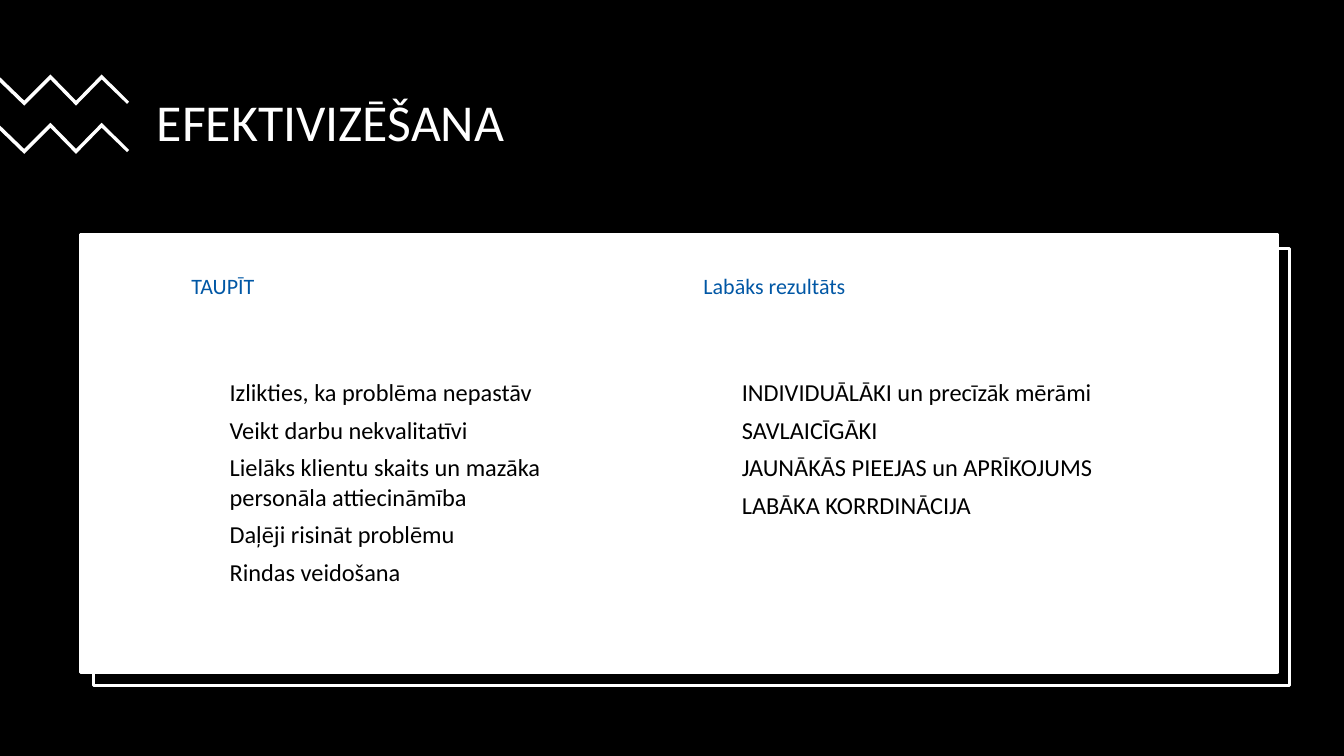
from pptx import Presentation
from pptx.dml.color import RGBColor
from pptx.enum.shapes import MSO_SHAPE
from pptx.enum.text import MSO_ANCHOR
from pptx.util import Pt

BLACK = RGBColor(0x00, 0x00, 0x00)
WHITE = RGBColor(0xFF, 0xFF, 0xFF)
BLUE = RGBColor(0x00, 0x57, 0xA5)
RECT = MSO_SHAPE.RECTANGLE
TOP, MIDDLE = MSO_ANCHOR.TOP, MSO_ANCHOR.MIDDLE

WIDTH, HEIGHT = 960, 540
TITLE = {"size": Pt(37), "color": WHITE}
HEADING = {"size": Pt(15.7), "color": BLUE}
ITEM = {"size": Pt(17.4), "color": BLACK}

COLUMNS = [
    ("TAUPĪT", 129.6, 297, [
        "Izlikties, ka problēma nepastāv",
        "Veikt darbu nekvalitatīvi",
        "Lielāks klientu skaits un mazāka personāla attiecināmība",
        "Daļēji risināt problēmu",
        "Rindas veidošana",
    ]),
    ("Labāks rezultāts", 495.4, 306, [
        "INDIVIDUĀLĀKI un precīzāk mērāmi",
        "SAVLAICĪGĀKI",
        "JAUNĀKĀS PIEEJAS un APRĪKOJUMS",
        "LABĀKA KORRDINĀCIJA",
    ]),
]


def add_rect(s, x, y, w, h, fill, line=None):
    sp = s.shapes.add_shape(RECT, Pt(x), Pt(y), Pt(w), Pt(h))
    sp.shadow.inherit = False
    sp.fill.solid()
    sp.fill.fore_color.rgb = fill
    if line is None:
        sp.line.fill.background()
    else:
        sp.line.color.rgb = line
        sp.line.width = Pt(2.25)


def add_text(s, x, y, w, h, lines, style, anchor=TOP, indent=0, **spacing):
    tf = s.shapes.add_textbox(Pt(x), Pt(y), Pt(w), Pt(h)).text_frame
    tf.word_wrap = True
    tf.vertical_anchor = anchor
    for i, line in enumerate(lines):
        p = tf.paragraphs[0] if i == 0 else tf.add_paragraph()
        if indent:
            p._p.get_or_add_pPr().set("marL", str(Pt(indent)))
        for name, value in spacing.items():
            setattr(p, name, value)
        r = p.add_run()
        r.text = line
        r.font.name = "Calibri"
        r.font.size = style["size"]
        r.font.color.rgb = style["color"]


def add_zigzag(s, x, y):
    # Upper edge, then the lower edge back to the start
    upper = [(0, 2), (17.3, 18.7), (36, 0), (54.3, 18.7), (72.6, 0), (92.2, 19.4)]
    lower = [(px, py + 3.5) for px, py in upper[:-1]]
    points = [(Pt(x + px), Pt(y + py))
              for px, py in upper + [(90.7, 21)] + lower[::-1]]
    builder = s.shapes.build_freeform(*points[0])
    builder.add_line_segments(points[1:], close=True)
    sp = builder.convert_to_shape()
    sp.shadow.inherit = False
    sp.fill.solid()
    sp.fill.fore_color.rgb = WHITE
    sp.line.fill.background()


def add_header(s, x, y, w, h):
    add_text(s, x + 105, y, w - 105, h, ["EFEKTIVIZĒŠANA"], TITLE,
             anchor=MIDDLE, line_spacing=0.9)
    for dy in (8.5, 43):
        add_zigzag(s, x, y + dy)


def add_panel(s, x, y, w, h):
    # Outlined frame set off behind the white card
    add_rect(s, x + 9, y + 10.4, w, h - 1.4, BLACK, WHITE)
    add_rect(s, x, y, w, h, WHITE, WHITE)


def add_column(s, x, y, w, h, heading, items):
    add_text(s, x, y, w, 56, [heading], HEADING, space_after=Pt(6))
    add_text(s, x, y + 75, w, h - 75, items, ITEM, indent=27.36,
             space_after=Pt(6))


def main():
    prs = Presentation()
    prs.slide_width, prs.slide_height = Pt(WIDTH), Pt(HEIGHT)
    s = prs.slides.add_slide(prs.slide_layouts[6])

    add_rect(s, 0, 0, WIDTH, HEIGHT, BLACK)
    add_header(s, 0, 44.7, 872.6, 88.5)
    add_panel(s, 57.6, 167.4, 854.6, 313)
    for heading, x, width, items in COLUMNS:
        add_column(s, x, 190.8, width, 262, heading, items)

    prs.save("out.pptx")


if __name__ == "__main__":
    main()
